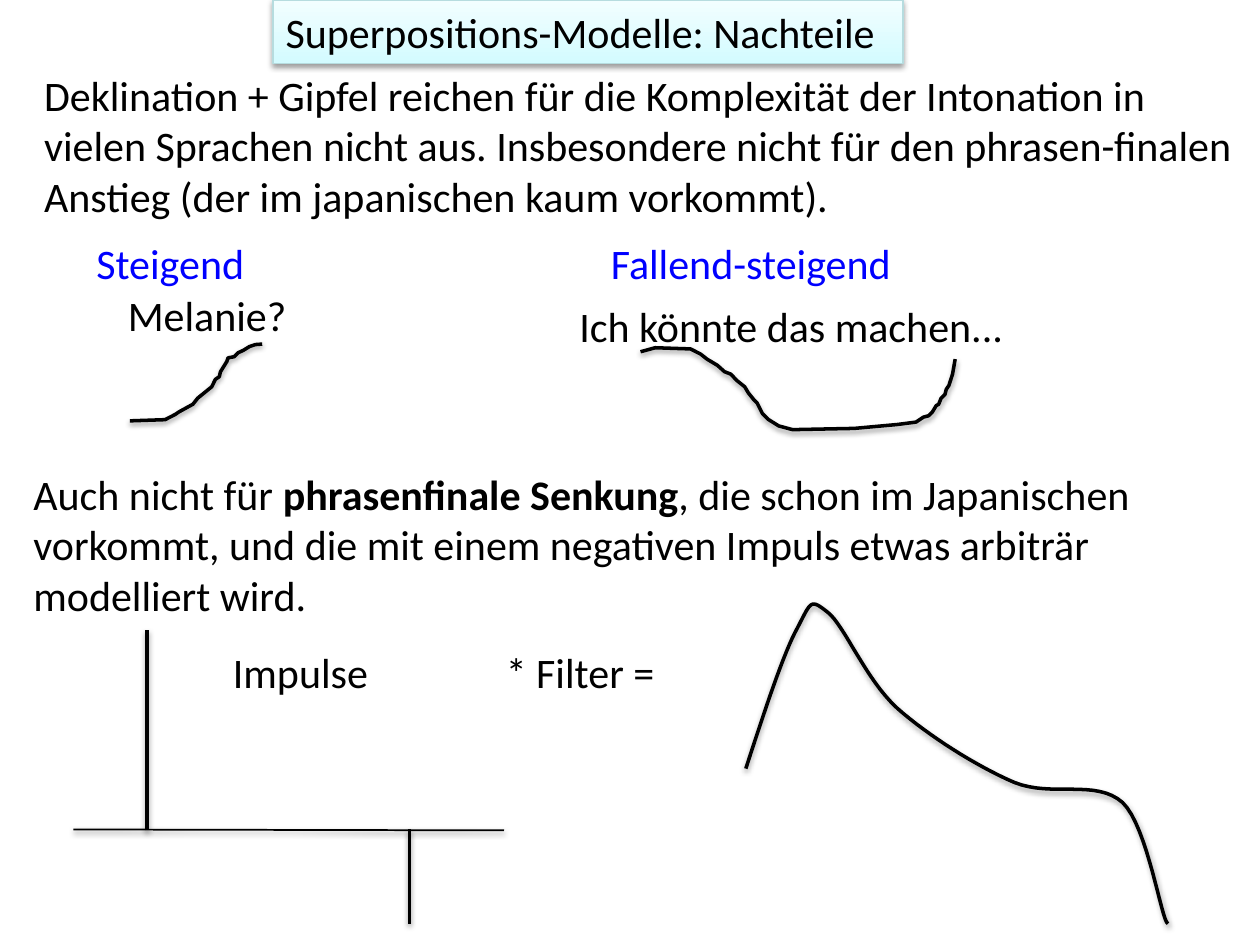
from dataclasses import dataclass

from lxml import etree
from pptx import Presentation
from pptx.dml.color import RGBColor
from pptx.enum.shapes import MSO_CONNECTOR
from pptx.enum.text import MSO_ANCHOR, MSO_AUTO_SIZE, PP_ALIGN
from pptx.oxml import parse_xml
from pptx.oxml.ns import qn
from pptx.util import Pt

STRAIGHT = MSO_CONNECTOR.STRAIGHT
TOP = MSO_ANCHOR.TOP
LEFT = PP_ALIGN.LEFT
GROW = MSO_AUTO_SIZE.SHAPE_TO_FIT_TEXT
FIXED = MSO_AUTO_SIZE.NONE


@dataclass(frozen=True)
class Theme:
    font: str = "Calibri"
    size: float = 24
    text: str = "000000"
    label: str = "0000FF"
    title_bottom: str = "D3FBFF"
    title_top: str = "F2FEFF"
    title_line: str = "B6DCDF"
    thick: float = 2
    thin: float = 1


THEME = Theme()

SHADOW = (
    '<a:effectLst xmlns:a="http://schemas.openxmlformats.org/drawingml/2006/main">'
    '<a:outerShdw blurRad="39400" dist="20300" dir="5400000" rotWithShape="0">'
    '<a:srgbClr val="000000"><a:alpha val="38000"/></a:srgbClr>'
    "</a:outerShdw></a:effectLst>"
)

RISE = [
    (74.2, 240.5), (94.3, 239.8), (100, 236.9), (102.2, 235.4), (110.2, 231),
    (113, 227.5), (121, 221), (121.7, 219.6), (123.1, 216.7), (125.3, 215.3),
    (126, 212.4), (129.6, 206.6), (130.3, 204.5), (133.9, 203.8), (136, 201.6),
    (139, 200.2), (142.6, 198), (146, 196.9), (149.8, 196.6),
]
FALL_RISE = [
    (366, 201), (374.4, 198.7), (394.6, 199.4), (400.3, 202.3), (404, 205.2),
    (410, 208.8), (414, 212.4), (417.6, 213.8), (421, 217.4), (425.5, 221),
    (427.7, 224.6), (430.6, 228.2), (432.7, 230.4), (435.6, 236.2),
    (439.2, 239.8), (445, 243.4), (452.9, 245.5), (488.2, 244.8),
    (512.6, 242.6), (523.4, 241.2), (527.8, 238.3), (530.6, 237.6),
    (532.8, 235.4), (535, 231.8), (536.4, 231), (537.8, 227.5), (540, 225.4),
    (540.7, 222.5), (542.2, 220.3), (544.3, 213.8), (545.8, 205.2),
]
FILTERED = [
    (426.2, 439.2), (437, 406), (447.8, 373), (455.8, 358.6),
    (463.7, 343.4), (463, 342), (473, 349.9),
    (482.4, 357.1), (494.6, 388.1), (512.6, 404.6),
    (530.6, 420.5), (558, 437.8), (579.6, 447.1),
    (601.2, 455.8), (626.4, 445), (641.5, 458.6),
    (655.9, 472.3), (663.8, 527), (667.4, 527.8),
]


def rgb(value):
    return RGBColor.from_string(value)


def place(sp, left, top, width, height):
    sp.left, sp.top, sp.width, sp.height = map(Pt, (left, top, width, height))


def add_shadow(sp):
    sp._element.spPr.append(parse_xml(SHADOW))


def style_line(sp, width, color=THEME.text):
    sp.line.color.rgb = rgb(color)
    sp.line.width = Pt(width)
    add_shadow(sp)


def write(sp, runs, color=THEME.text, wrap=True, fit=GROW):
    tf = sp.text_frame
    tf.word_wrap = wrap
    tf.auto_size = fit
    tf.vertical_anchor = TOP
    p = tf.paragraphs[0]
    p.alignment = LEFT
    p.space_before = Pt(0)
    for text, bold in runs:
        r = p.add_run()
        r.text = text
        r.font.name = THEME.font
        r.font.size = Pt(THEME.size)
        r.font.bold = bold
        r.font.color.rgb = rgb(color)
    return p


def add_title(s, text, box):
    sp = s.shapes.title
    place(sp, *box)
    sp.fill.gradient()
    sp.fill.gradient_angle = 90
    stops = sp.fill.gradient_stops
    for stop, position, color in zip(
        stops, (0, 1), (THEME.title_bottom, THEME.title_top)
    ):
        stop.position = position
        stop.color.rgb = rgb(color)
    style_line(sp, 0.75, THEME.title_line)
    write(sp, [(text, False)], fit=FIXED)


def add_body(s, text, box):
    sp = s.placeholders[1]
    place(sp, *box)
    p = write(sp, [(text, False)], fit=FIXED)
    pPr = p._p.get_or_add_pPr()
    pPr.set("marL", "0")
    pPr.set("indent", "0")
    etree.SubElement(pPr, qn("a:buNone"))


def add_text(s, runs, box, color=THEME.text, wrap=True):
    sp = s.shapes.add_textbox(*map(Pt, box))
    write(sp, runs, color, wrap)


def add_curve(s, points):
    pts = [(Pt(x), Pt(y)) for x, y in points]
    builder = s.shapes.build_freeform(*pts[0])
    builder.add_line_segments(pts[1:], close=False)
    sp = builder.convert_to_shape()
    sp.fill.background()
    style_line(sp, THEME.thick)


def bezier_points(controls, steps=16):
    points = [controls[0]]
    for i in range(0, len(controls) - 1, 3):
        for k in range(1, steps + 1):
            t = k / steps
            weights = ((1 - t) ** 3, 3 * t * (1 - t) ** 2, 3 * t * t * (1 - t), t**3)
            points.append(tuple(
                sum(w * c[axis] for w, c in zip(weights, controls[i:i + 4]))
                for axis in (0, 1)
            ))
    return points


def add_line(s, start, end, width):
    line = s.shapes.add_connector(STRAIGHT, *map(Pt, (*start, *end)))
    style_line(line, width)


def main():
    prs = Presentation()
    prs.slide_width, prs.slide_height = Pt(720), Pt(540)
    s = prs.slides.add_slide(prs.slide_layouts[1])

    add_title(s, "Superpositions-Modelle: Nachteile", (156, 0, 360, 36.5))
    add_body(
        s,
        "Deklination + Gipfel reichen für die Komplexität der Intonation in "
        "vielen Sprachen nicht aus. Insbesondere nicht für den phrasen-finalen "
        "Anstieg (der im japanischen kaum vorkommt).",
        (18, 36, 702, 94.5),
    )

    add_text(s, [("Steigend", False)], (48, 132, 114, 36.5), THEME.label)
    add_text(s, [("Melanie?", False)], (66, 162, 144, 36.5))
    add_text(s, [("Fallend-steigend", False)], (342, 132, 252, 36.5), THEME.label)
    add_text(s, [("Ich könnte das machen...", False)], (324, 168, 276, 36.5))
    add_text(
        s,
        [
            ("Auch nicht für ", False),
            ("phrasenfinale Senkung", True),
            (", die schon im Japanischen vorkommt, und die mit einem negativen "
             "Impuls etwas arbiträr modelliert wird.", False),
        ],
        (12, 264, 690, 95.5),
    )

    for points in (RISE, FALL_RISE, bezier_points(FILTERED)):
        add_curve(s, points)

    add_line(s, (42, 474), (288, 474.5), THEME.thin)
    add_line(s, (84, 474.5), (84, 360), THEME.thick)
    add_line(s, (234, 528), (234, 474), THEME.thick)
    add_text(s, [("Impulse", False)], (126, 366, 93, 36.5), wrap=False)
    add_text(s, [("* Filter =", False)], (282, 366, 108, 36.5))

    prs.save("out.pptx")


if __name__ == "__main__":
    main()
